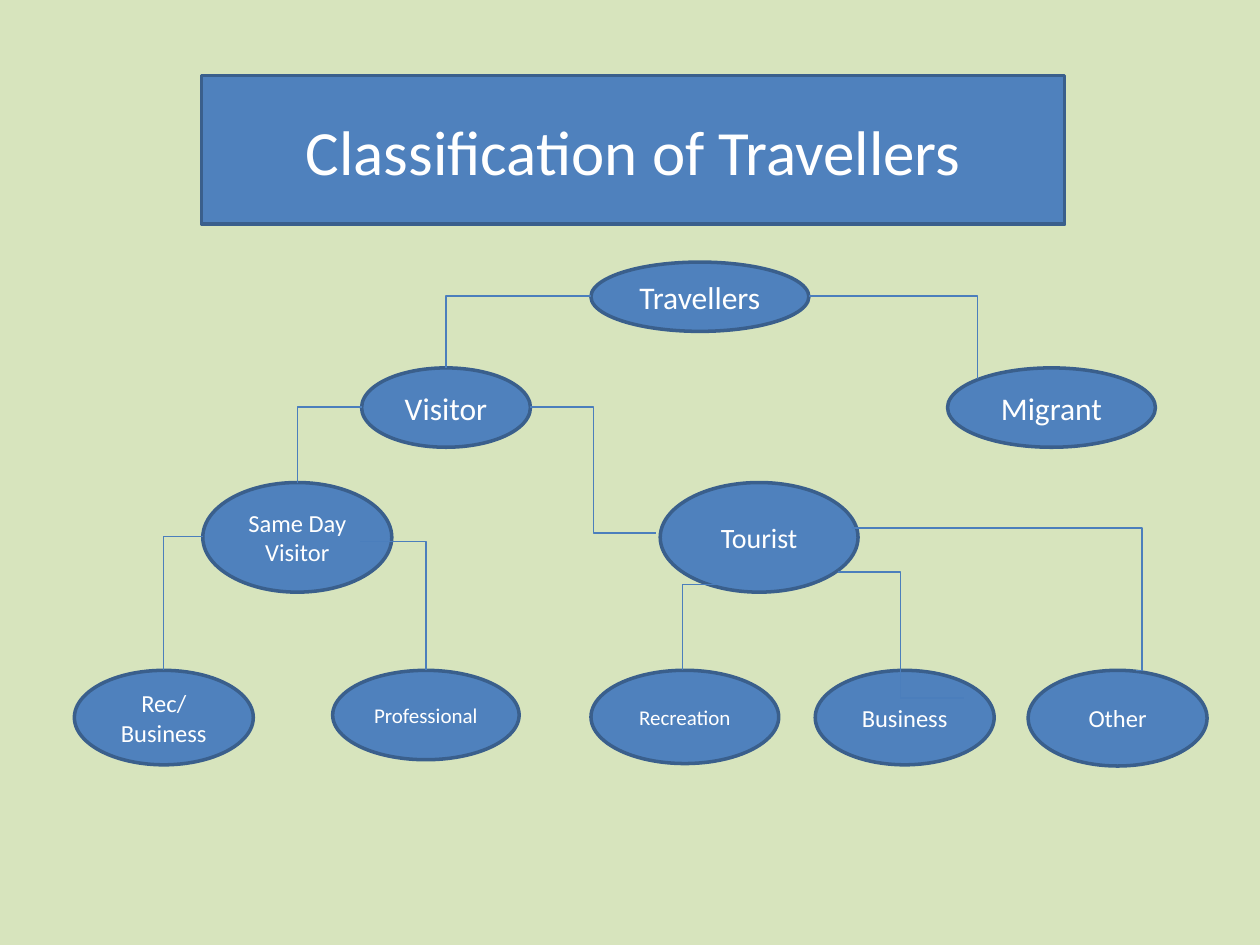
from pptx import Presentation, util as u
from pptx.dml.color import RGBColor
from pptx.enum import shapes as s, text as t
from pptx.oxml import parse_xml
from pptx.oxml.ns import nsdecls

COLS = 100  # the slide is a grid of 100 columns by 75 square rows
WIDTH = u.Inches(10)
FILL, EDGE, LINK, WHITE, BACK = "4F81BD", "3A5F8C", "4B7EBC", "FFFFFF", "D7E4BD"

# Top row of each level, then its nodes: label, left, width, height, size
LEVELS = [
    (20.8, [("Travellers", 46.9, 17.3, 5.5, 18)]),
    (29.2, [("Visitor", 28.7, 13.4, 6.3, 18),
            ("Migrant", 75.2, 16.5, 6.3, 18)]),
    (38.3, [("Same Day Visitor", 16.1, 15, 8.7, 14),
            ("Tourist", 52.4, 15.7, 8.7, 16)]),
    (53.2, [("Rec/\nBusiness", 5.9, 14.2, 7.5, 14),
            ("Professional", 26.4, 14.8, 7.1, 12),
            ("Recreation", 46.9, 14.9, 7.4, 12),
            ("Business", 64.7, 14.2, 7.5, 14),
            ("Other", 81.6, 14.2, 7.6, 14)]),
]

# Start column and row, end column and row, share of the width at the bend
LINKS = [
    (64.2, 23.5, 77.6, 30.1, 1),      # Travellers to Migrant
    (46.9, 23.5, 35.4, 29.2, 1),      # Travellers to Visitor
    (28.7, 32.3, 23.6, 38.3, 1),      # Visitor to Same Day Visitor
    (42.1, 32.3, 52.1, 42.3, 0.5),    # Visitor to Tourist
    (16.1, 42.6, 13, 53.2, 1),        # Same Day Visitor to Rec/Business
    (28.6, 43, 33.8, 53.2, 1),        # Same Day Visitor to Professional
    (56.9, 46.4, 54.2, 53.2, 1),      # Tourist to Recreation
    (66.5, 45.4, 76.5, 55.4, 0.5),    # Tourist to Business
    (67.6, 41.9, 90.2, 53.2, 1.02),   # Tourist to Other
]


def grid(n):
    return u.Emu(round(n * WIDTH / COLS))


def color(code):
    return RGBColor.from_string(code)


def style(shape, box, label, size):
    """Place a filled, outlined shape and set its centred label."""
    shape.left, shape.top, shape.width, shape.height = map(grid, box)
    shape.fill.solid()
    shape.fill.fore_color.rgb = color(FILL)
    shape.line.color.rgb = color(EDGE)
    shape.line.width = u.Pt(2)
    frame = shape.text_frame
    frame.text = label
    frame.word_wrap = True
    frame.vertical_anchor = t.MSO_ANCHOR.MIDDLE
    for para in frame.paragraphs:
        para.alignment = t.PP_ALIGN.CENTER
        for run in para.runs:
            run.font.name = "Calibri"
            run.font.size = u.Pt(size)
            run.font.color.rgb = color(WHITE)


def node(slide, box, label, size):
    oval = slide.shapes.add_shape(s.MSO_SHAPE.OVAL, *map(grid, box))
    oval.shadow.inherit = False
    style(oval, box, label, size)


def link(slide, ends, bend):
    """Draw an elbow that leaves its start sideways and turns at bend."""
    line = slide.shapes.add_connector(s.MSO_CONNECTOR.ELBOW, *map(grid, ends))
    line.line.color.rgb = color(LINK)
    line.line.width = u.Pt(0.75)
    props = line._element.spPr
    guides = props.prstGeom.get_or_add_avLst()
    guides.append(parse_xml(
        f'<a:gd {nsdecls("a")} name="adj1" fmla="val {round(bend * 100000)}"/>'))
    props.append(parse_xml(f'<a:effectLst {nsdecls("a")}/>'))


def tree(slide):
    for top, nodes in LEVELS:
        for label, left, width, height, size in nodes:
            node(slide, (left, top, width, height), label, size)
    for *ends, bend in LINKS:
        link(slide, ends, bend)


def main():
    deck = Presentation()
    deck.slide_width, deck.slide_height = WIDTH, grid(75)
    slide = deck.slides.add_slide(deck.slide_layouts[5])
    slide.background.fill.solid()
    slide.background.fill.fore_color.rgb = color(BACK)
    style(slide.shapes.title, (16, 6, 68.5, 11.8),
          "Classification of Travellers", 36)
    tree(slide)
    deck.save("out.pptx")


if __name__ == "__main__":
    main()
